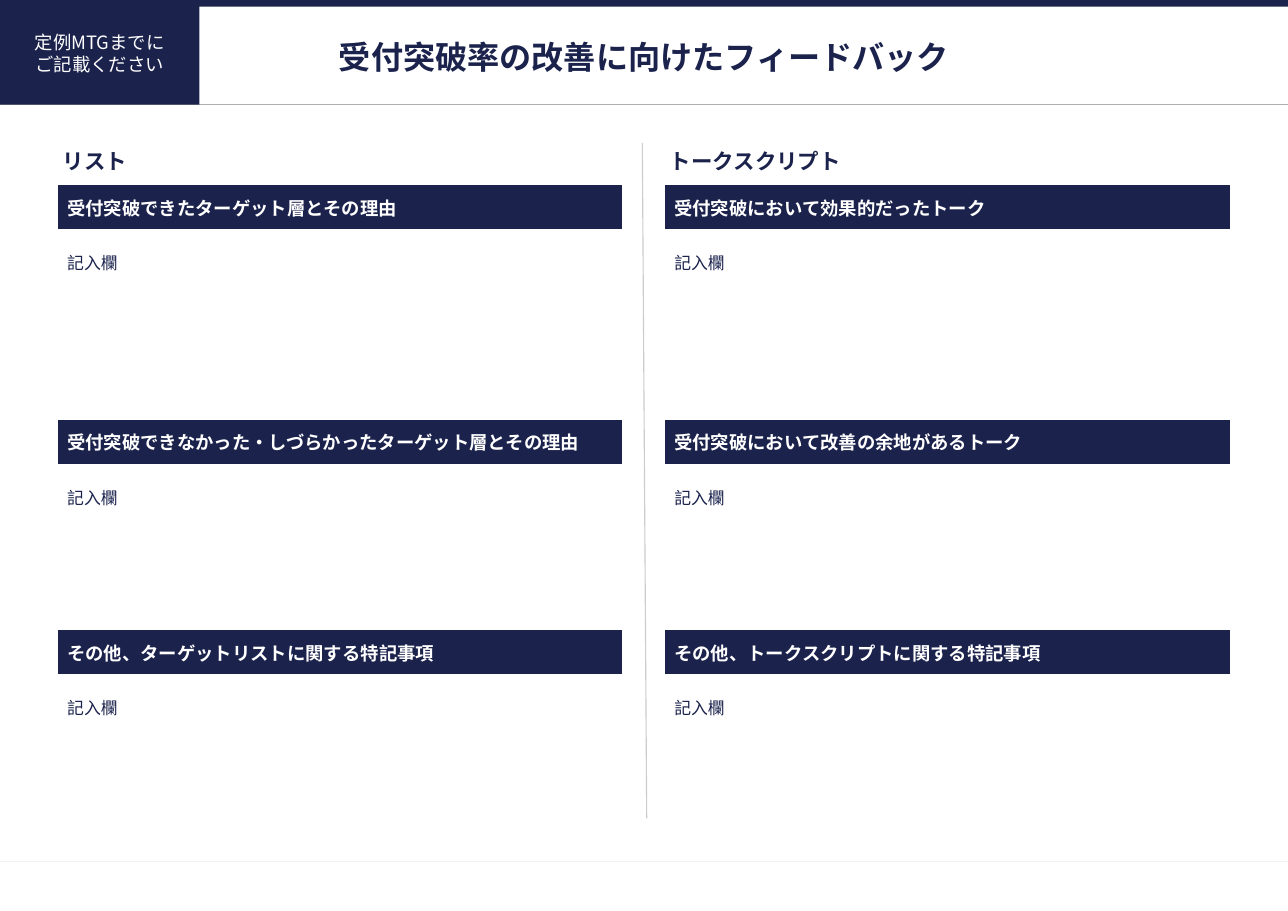
import dataclasses

import lxml.etree
import pptx
import pptx.dml.color
import pptx.enum.shapes
import pptx.enum.text
import pptx.oxml.ns
import pptx.util

Inches = pptx.util.Inches
ALIGN = pptx.enum.text.PP_ALIGN
ANCHOR = pptx.enum.text.MSO_ANCHOR
PLAIN_GRID = "{2D5ABB26-0587-4C30-8999-92F81FD0307C}"


@dataclasses.dataclass(frozen=True)
class Theme:
    font: str = "Noto Sans CJK JP"
    navy: str = "1B224C"
    white: str = "FFFFFF"
    gray: str = "AFAFAF"
    silver: str = "CCCCCC"
    pale: str = "F2F2F2"
    title: float = 21
    topic: float = 14
    head: float = 12
    entry: float = 11
    rule: float = 0.75


@dataclasses.dataclass(frozen=True)
class Rule:
    start: tuple[float, float]
    end: tuple[float, float]
    color: str


@dataclasses.dataclass(frozen=True)
class Panel:
    left: float
    topic: str
    heads: tuple[str, ...]


THEME = Theme()
WIDTH, HEIGHT = 11.69, 8.27
PANEL_TOP, PANEL_WIDTH = 1.27, 5.12
TOPIC_ROW, HEAD_ROW = 0.41, 0.4
ENTRY_ROWS = (1.73, 1.51, 1.51)
ENTRY = "記入欄"

RULES = (
    Rule((0, 7.82), (WIDTH, 7.82), THEME.pale),
    Rule((0, 0.95), (WIDTH, 0.95), THEME.gray),
    Rule((5.83, 1.3), (5.87, 7.43), THEME.silver),
)
PANELS = (
    Panel(6.04, "トークスクリプト", (
        "受付突破において効果的だったトーク",
        "受付突破において改善の余地があるトーク",
        "その他、トークスクリプトに関する特記事項",
    )),
    Panel(0.53, "リスト", (
        "受付突破できたターゲット層とその理由",
        "受付突破できなかった・しづらかったターゲット層とその理由",
        "その他、ターゲットリストに関する特記事項",
    )),
)


def tint(code: str) -> pptx.dml.color.RGBColor:
    return pptx.dml.color.RGBColor.from_string(code)


def write(frame, text: str, size: float, color: str, bold: bool = False,
          align=ALIGN.LEFT, spacing: float = 1.0) -> None:
    frame.text = text
    frame.word_wrap = True
    for para in frame.paragraphs:
        para.alignment = align
        para.line_spacing = spacing
        for run in para.runs:
            font = run.font
            font.name, font.size, font.bold = THEME.font, pptx.util.Pt(size), bold
            font.color.rgb = tint(color)
            # Japanese glyphs take the East Asian font
            asian = lxml.etree.SubElement(
                run._r.get_or_add_rPr(), pptx.oxml.ns.qn("a:ea"))
            asian.set("typeface", THEME.font)


def inset(target, side: float, base: float) -> None:
    target.margin_left = target.margin_right = target.margin_top = Inches(side)
    target.margin_bottom = Inches(base)


def draw_rule(slide, rule: Rule) -> None:
    line = slide.shapes.add_connector(
        pptx.enum.shapes.MSO_CONNECTOR.STRAIGHT,
        *map(Inches, rule.start + rule.end))
    line.line.color.rgb = tint(rule.color)
    line.line.width = pptx.util.Pt(THEME.rule)
    lxml.etree.SubElement(line._element.spPr, pptx.oxml.ns.qn("a:effectLst"))


def draw_block(slide, *box: float):
    block = slide.shapes.add_shape(
        pptx.enum.shapes.MSO_SHAPE.RECTANGLE, *map(Inches, box))
    block.shadow.inherit = False
    block.fill.solid()
    block.fill.fore_color.rgb = tint(THEME.navy)
    block.line.fill.background()
    return block


def draw_title(slide, text: str) -> None:
    frame = slide.shapes.add_textbox(
        *map(Inches, (0.53, 0.33, 10.63, 0.39))).text_frame
    inset(frame, 0.04, 0.06)
    frame.vertical_anchor = ANCHOR.MIDDLE
    write(frame, text, THEME.title, THEME.navy, True, ALIGN.CENTER)


def draw_badge(slide, text: str) -> None:
    frame = draw_block(slide, 0, 0.01, 1.81, 0.94).text_frame
    inset(frame, 0.04, 0.04)
    frame.vertical_anchor = ANCHOR.MIDDLE
    write(frame, text, THEME.head, THEME.white, align=ALIGN.CENTER)


def draw_panel(slide, panel: Panel) -> None:
    heights = [TOPIC_ROW]
    for height in ENTRY_ROWS:
        heights += [HEAD_ROW, height]
    table = slide.shapes.add_table(
        len(heights), 1, Inches(panel.left), Inches(PANEL_TOP),
        Inches(PANEL_WIDTH), Inches(sum(heights))).table
    table.first_row = table.horz_banding = False
    table._tbl.tblPr.find(pptx.oxml.ns.qn("a:tableStyleId")).text = PLAIN_GRID
    for row, height in zip(table.rows, heights):
        row.height = Inches(height)
        cell = row.cells[0]
        inset(cell, 0.08, 0.08)
        cell.fill.background()

    # Topic above the pairs of heading and entry space
    topic = table.cell(0, 0)
    inset(topic, 0.04, 0.08)
    write(topic.text_frame, panel.topic, THEME.topic, THEME.navy, True)
    for index, text in enumerate(panel.heads):
        head = table.cell(2 * index + 1, 0)
        head.fill.solid()
        head.fill.fore_color.rgb = tint(THEME.navy)
        head.vertical_anchor = ANCHOR.MIDDLE
        write(head.text_frame, text, THEME.head, THEME.white, True)
        entry = table.cell(2 * index + 2, 0)
        write(entry.text_frame, ENTRY, THEME.entry, THEME.navy, spacing=1.5)


def main() -> None:
    deck = pptx.Presentation()
    deck.slide_width, deck.slide_height = Inches(WIDTH), Inches(HEIGHT)
    slide = deck.slides.add_slide(deck.slide_layouts[6])

    # Frame of the page
    draw_block(slide, 0, 0, WIDTH, 0.06)
    for rule in RULES:
        draw_rule(slide, rule)

    # Heading and feedback form
    draw_title(slide, "受付突破率の改善に向けたフィードバック")
    for panel in PANELS:
        draw_panel(slide, panel)
    draw_badge(slide, "定例MTGまでに\nご記載ください")

    deck.save("out.pptx")


if __name__ == "__main__":
    main()
